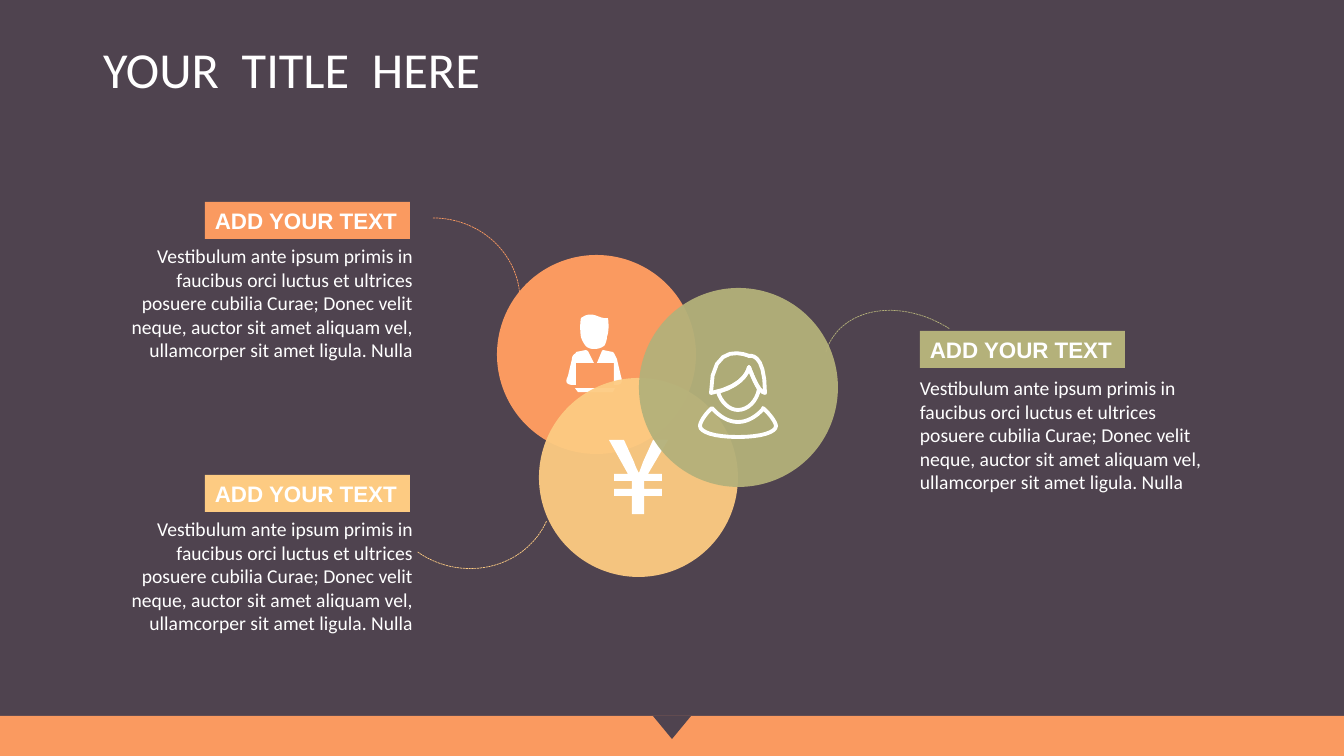
from dataclasses import dataclass

from pptx import Presentation
from pptx import util as u
from pptx.dml import color
from pptx.enum import dml, shapes, text
from pptx.oxml import ns, xmlchemy

SCALE = 914400 / 100.8
BODY = ("Vestibulum ante ipsum primis in faucibus orci luctus et ultrices posuere "
        "cubilia Curae; Donec velit neque, auctor sit amet aliquam vel, "
        "ullamcorper sit amet ligula. Nulla")


@dataclass(frozen=True)
class Theme:
    back: str = "4F434F"
    white: str = "FFFFFF"
    orange: str = "FA9A60"
    yellow: str = "FDCB82"
    green: str = "B4B17A"
    title: tuple = (("name", "Calibri"), ("size", u.Pt(36)), ("bold", False))
    label: tuple = (("name", "Arial"), ("size", u.Pt(16)), ("bold", True))
    body: tuple = (("name", "Calibri"), ("size", u.Pt(14)), ("bold", False))
    dash_width: float = 0.5
    icon_width: float = 2.75


THEME = Theme()

WORKER = [
    [(581, 337), (580, 330, 580, 324, 581, 318), (593, 309, 599, 320, 608, 318),
     (609, 324, 609, 332, 607, 337), (607, 340, 606, 342, 605, 345),
     (602, 348, 598, 349, 594, 349), (591, 349, 587, 348, 585, 345),
     (583, 342, 582, 340, 581, 337)],
    [(575, 388), (615, 388), (613, 392), (578, 392)],
    [(617, 359), (621, 376), (623, 382, 622, 385, 615, 385), (614, 385),
     (614, 363), (597, 363), (602, 351), (603, 350), (613, 352), (614, 353),
     (615, 355, 616, 357, 617, 359)],
    [(576, 385), (574, 385), (566, 385, 565, 382, 568, 376), (572, 359),
     (572, 356, 574, 354, 576, 353), (576, 352), (586, 350), (588, 351),
     (594, 363), (576, 363)],
]
YEN = [
    [(662, 474), (662, 481), (644, 481), (644, 489), (662, 489), (662, 496),
     (644, 496), (644, 514), (632, 514), (632, 496), (614, 496), (614, 489),
     (632, 489), (632, 481), (614, 481), (614, 474), (628, 474), (609, 440),
     (624, 440), (634, 462), (635, 465, 637, 470, 639, 473),
     (640, 470, 642, 465, 643, 462), (653, 440), (668, 440), (648, 474)],
]
SHOULDERS = [
    [(763, 408), (763, 409), (756, 417, 747, 422, 738, 422),
     (729, 422, 720, 417, 713, 409), (712, 408), (704, 415, 700, 423, 700, 426),
     (700, 432, 714, 437, 738, 437), (762, 437, 776, 432, 776, 426),
     (776, 423, 771, 415, 763, 408)],
]
FACE = [
    [(749, 367), (749, 367, 747, 384, 718, 392), (721, 402, 729, 410, 738, 410),
     (748, 410, 757, 401, 759, 389), (754, 381, 749, 367, 749, 367)],
]
HAIR = [
    [(711, 393), (747, 386, 749, 367, 749, 367), (749, 367, 758, 393, 765, 393),
     (765, 351, 749, 356, 749, 356), (749, 356, 711, 338, 711, 393)],
]


def px(*lengths):
    return [u.Emu(round(n * SCALE)) for n in lengths]


def rgb(value):
    return color.RGBColor.from_string(value)


def paint(sp, fill=None, line=None, width=None):
    sp.shadow.inherit = False
    if fill:
        sp.fill.solid()
        sp.fill.fore_color.rgb = rgb(fill)
    else:
        sp.fill.background()
    if line:
        sp.line.color.rgb = rgb(line)
        sp.line.width = u.Pt(width)
    else:
        sp.line.fill.background()


def add_preset(slide, kind, box, fill, rotation=0):
    sp = slide.shapes.add_shape(kind, *px(*box))
    paint(sp, fill)
    sp.rotation = rotation
    return sp


def add_circle(slide, x, y, fill, alpha=None):
    sp = add_preset(slide, shapes.MSO_SHAPE.OVAL, (x, y, 199, 199), fill)
    if alpha:
        clr = sp._element.spPr.find(".//" + ns.qn("a:srgbClr"))
        node = xmlchemy.OxmlElement("a:alpha")
        node.set("val", str(alpha * 1000))
        clr.append(node)


def add_arc(slide, box, angles, line, rotation=0):
    sp = add_preset(slide, shapes.MSO_SHAPE.ARC, box, None, rotation)
    for i, angle in enumerate(angles):
        sp.adjustments[i] = angle
    paint(sp, None, line, THEME.dash_width)
    sp.line.dash_style = dml.MSO_LINE.SQUARE_DOT


def trace(segments, steps=8):
    points = [segments[0]]
    for seg in segments[1:]:
        if len(seg) == 2:
            points.append(seg)
            continue
        ctrl = [points[-1], seg[:2], seg[2:4], seg[4:]]
        for n in range(1, steps + 1):
            t = n / steps
            weights = ((1 - t) ** 3, 3 * t * (1 - t) ** 2, 3 * t * t * (1 - t), t ** 3)
            points.append(tuple(sum(w * c[i] for w, c in zip(weights, ctrl))
                                for i in (0, 1)))
    return [px(*point) for point in points]


def add_icon(tree, outlines, **colours):
    first, *others = [trace(outline) for outline in outlines]
    builder = tree.build_freeform(*first[0])
    builder.add_line_segments(first[1:], close=True)
    for points in others:
        builder.move_to(*points[0])
        builder.add_line_segments(points[1:], close=True)
    paint(builder.convert_to_shape(), **colours)


def write(sp, words, fmt, align=text.PP_ALIGN.LEFT):
    p = sp.text_frame.paragraphs[0]
    p.alignment = align
    r = p.add_run()
    r.text = words
    for name, value in fmt:
        setattr(r.font, name, value)
    r.font.color.rgb = rgb(THEME.white)
    return p


def add_title(slide, words):
    sp = slide.shapes.title
    sp.left, sp.top, sp.width, sp.height = px(93, 40, 1159, 146)
    sp.text_frame.vertical_anchor = text.MSO_ANCHOR.TOP
    write(sp, words, THEME.title).line_spacing = 0.9


def add_entry(slide, label_at, body_at, fill, align):
    sp = add_preset(slide, shapes.MSO_SHAPE.RECTANGLE, (*label_at, 205, 37), fill)
    sp.text_frame.word_wrap = False
    sp.text_frame.auto_size = text.MSO_AUTO_SIZE.SHAPE_TO_FIT_TEXT
    write(sp, "ADD YOUR TEXT", THEME.label)
    sp = slide.shapes.add_textbox(*px(*body_at, 317, 129))
    sp.text_frame.word_wrap = True
    sp.text_frame.auto_size = text.MSO_AUTO_SIZE.SHAPE_TO_FIT_TEXT
    write(sp, BODY, THEME.body, align)


def main():
    prs = Presentation()
    prs.slide_width, prs.slide_height = px(1344, 756)
    slide = prs.slides.add_slide(prs.slide_layouts[5])
    slide.background.fill.solid()
    slide.background.fill.fore_color.rgb = rgb(THEME.back)

    add_preset(slide, shapes.MSO_SHAPE.RECTANGLE, (0, 716, 1344, 40), THEME.orange)
    add_preset(slide, shapes.MSO_SHAPE.ISOSCELES_TRIANGLE, (653, 716, 38, 23),
               THEME.back, 180)
    add_title(slide, "YOUR  TITLE  HERE")

    left, right = text.PP_ALIGN.LEFT, text.PP_ALIGN.RIGHT
    add_entry(slide, (205, 202), (106, 239), THEME.orange, right)
    add_entry(slide, (205, 475), (106, 512), THEME.yellow, right)
    add_entry(slide, (920, 331), (910, 371), THEME.green, left)

    add_arc(slide, (346, 218, 174, 165), (162, 213.5), THEME.orange)
    add_arc(slide, (380, 404, 174, 164), (2.5, 64.45), THEME.yellow, 19.8)
    add_arc(slide, (840, 295, 141, 185), (156.7, 1.27), THEME.green, 301.6)

    add_circle(slide, 497, 255, THEME.orange)
    add_icon(slide.shapes, WORKER, fill=THEME.white)
    add_circle(slide, 539, 378, THEME.yellow, 95)
    add_icon(slide.shapes, YEN, fill=THEME.white)
    add_circle(slide, 639, 288, THEME.green, 95)
    woman = slide.shapes.add_group_shape()
    for outlines in (SHOULDERS, FACE, HAIR):
        add_icon(woman.shapes, outlines, line=THEME.white, width=THEME.icon_width)

    prs.save("out.pptx")


if __name__ == "__main__":
    main()
